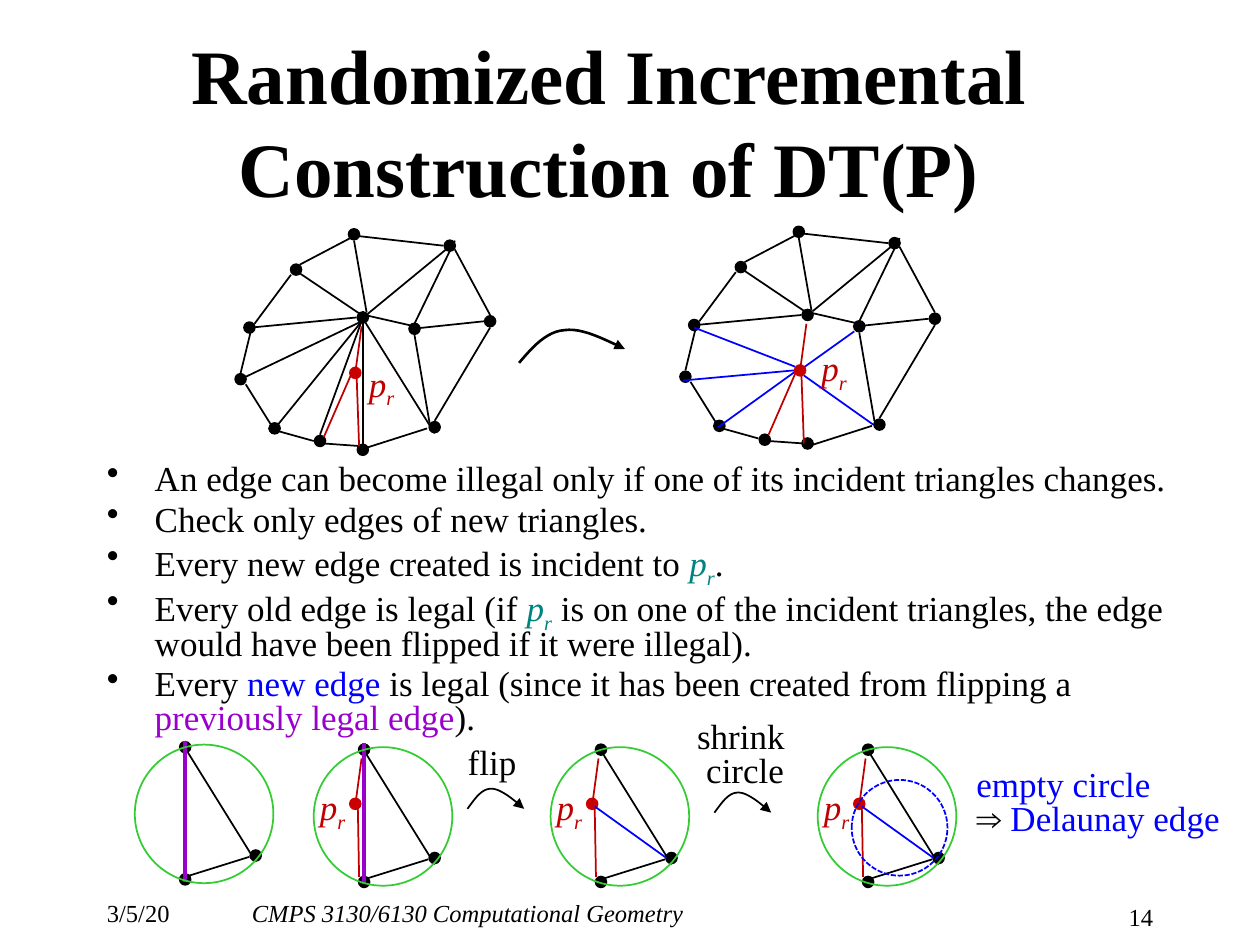
from dataclasses import dataclass

from lxml.etree import SubElement
from pptx import Presentation
from pptx.dml.color import RGBColor
from pptx.enum.dml import MSO_LINE
from pptx.enum.shapes import MSO_CONNECTOR, MSO_SHAPE
from pptx.enum.text import MSO_ANCHOR, MSO_AUTO_SIZE, PP_ALIGN
from pptx.oxml.ns import qn
from pptx.util import Inches, Pt


@dataclass(frozen=True)
class Theme:
    font: str = "Times New Roman"
    black: str = "000000"
    teal: str = "008380"
    blue: str = "0000FF"
    purple: str = "9900CC"
    green: str = "33CC33"
    red: str = "C00000"
    red_dot: str = "CC0000"
    title: int = 44
    body: int = 20
    footer: int = 14
    thin: float = 1
    medium: float = 1.5
    thick: float = 2.5


THEME = Theme()
CELL = Inches(0.01)  # the slide is a grid of 1000 columns by 750 rows
DOT = 10
PR_LABEL = [("p", THEME.red, "i"), ("r", THEME.red, "i_")]

# Triangulation: grid cells from the top left of its box
RIM_DOTS = [(32, 159), (5, 120), (12, 79), (49, 33), (102, 71), (143, 80),
            (95, 5), (171, 14), (159, 158), (203, 74)]
MESH_EDGES = [
    (92, 8, 52, 29), (16, 76, 45, 37), (5, 115, 14, 78), (29, 156, 9, 124),
    (63, 169, 27, 159), (99, 173, 71, 171), (153, 159, 106, 174),
    (143, 85, 155, 155), (99, 68, 143, 78), (52, 36, 101, 69),
    (95, 10, 105, 67), (168, 17, 106, 68), (175, 10, 141, 80),
    (95, 6, 166, 14), (175, 17, 203, 69), (203, 79, 159, 153),
    (198, 74, 141, 80), (13, 79, 97, 71)]
NEW_POINT = (96, 115)
NEW_POINT_EDGES = [(96, 115, 101, 78), (71, 166, 95, 111), (99, 173, 97, 116)]
OLD_SPOKES = [(7, 119, 99, 75), (33, 158, 106, 68), (68, 164, 101, 74),
              (102, 178, 102, 66), (159, 163, 104, 75)]
FLIPPED_SPOKES = [(12, 81, 92, 112), (3, 123, 91, 115), (154, 158, 99, 119),
                  (139, 84, 97, 114), (31, 160, 92, 116)]

# Curved arrows: start point, then two Bezier segments
LARGE_ARC = [(0, 27), (11, 14), (22, 2), (36, 1), (50, -1), (67, 8), (84, 16)]
SMALL_ARC = [(0, 16), (6, 8), (11, 0), (19, 0), (26, 0), (36, 8), (45, 16)]


def color(value):
    return RGBColor.from_string(value)


def cells(*values):
    return [round(value * CELL) for value in values]


def write_runs(paragraph, runs, size):
    """Each run is (text, color, flags): b bold, i italic, _ subscript."""
    for text, run_color, flags in runs:
        for index, piece in enumerate(text.split("\n")):
            if index:
                paragraph.add_line_break()
            if not piece:
                continue
            run = paragraph.add_run()
            run.text = piece
            run.font.name, run.font.size = THEME.font, Pt(size)
            run.font.color.rgb = color(run_color)
            run.font.bold, run.font.italic = "b" in flags, "i" in flags
            if "_" in flags:
                run._r.get_or_add_rPr().set("baseline", "-25000")


def add_text(slide, box, runs, size=THEME.body, align=PP_ALIGN.LEFT,
             spacing=1.0, wrap=False):
    shape = slide.shapes.add_textbox(*cells(*box))
    shape.text_frame.word_wrap = wrap
    paragraph = shape.text_frame.paragraphs[0]
    paragraph.alignment, paragraph.line_spacing = align, spacing
    write_runs(paragraph, runs, size)
    return shape


def add_pr_label(slide, left, top):
    label = add_text(slide, (left, top, 42, 37), PR_LABEL, spacing=0.8)
    label.text_frame.paragraphs[0].space_before = Pt(THEME.body * 0.2)


def add_ellipse(slide, left, top, size, fill=None, line=None, dashed=False):
    shape = slide.shapes.add_shape(MSO_SHAPE.OVAL, *cells(left, top, size, size))
    shape.shadow.inherit = False
    if fill:
        shape.fill.solid()
        shape.fill.fore_color.rgb = color(fill)
    else:
        shape.fill.background()
    if line:
        shape.line.color.rgb, shape.line.width = color(line), Pt(THEME.thin)
    else:
        shape.line.fill.background()
    if dashed:
        shape.line.dash_style = MSO_LINE.SQUARE_DOT


def add_dots(slide, left, top, centers, fill=THEME.black):
    for x, y in centers:
        add_ellipse(slide, left + x - DOT / 2, top + y - DOT / 2, DOT, fill)


def add_edges(slide, left, top, edges, line=THEME.black, width=THEME.thin):
    for x1, y1, x2, y2 in edges:
        edge = slide.shapes.add_connector(
            MSO_CONNECTOR.STRAIGHT, *cells(left + x1, top + y1, left + x2, top + y2))
        edge.line.color.rgb, edge.line.width = color(line), Pt(width)
        SubElement(edge._element.spPr, qn("a:effectLst"))


def add_curved_arrow(slide, left, top, arc, width=THEME.thin, steps=12):
    points = []
    for first in (0, 3):
        a, b, c, d = arc[first:first + 4]
        for step in range(1, steps + 1):
            t = step / steps
            weights = ((1 - t) ** 3, 3 * t * (1 - t) ** 2, 3 * t * t * (1 - t), t ** 3)
            x, y = (sum(w * p[axis] for w, p in zip(weights, (a, b, c, d)))
                    for axis in (0, 1))
            points.append(cells(left + x, top + y))
    builder = slide.shapes.build_freeform(*cells(left + arc[0][0], top + arc[0][1]))
    builder.add_line_segments(points, close=False)
    arrow = builder.convert_to_shape()
    arrow.shadow.inherit = False
    arrow.fill.background()
    arrow.line.color.rgb, arrow.line.width = color(THEME.black), Pt(width)
    SubElement(arrow.line._get_or_add_ln(), qn("a:tailEnd"), type="triangle")


def add_title(slide, box):
    title = slide.shapes.title
    title.left, title.top, title.width, title.height = cells(*box)
    frame = title.text_frame
    frame.word_wrap, frame.auto_size = True, MSO_AUTO_SIZE.NONE
    frame.vertical_anchor = MSO_ANCHOR.MIDDLE
    frame.paragraphs[0].alignment = PP_ALIGN.CENTER
    write_runs(frame.paragraphs[0], [("Randomized Incremental Construction of DT(P)",
                                      THEME.black, "b")], THEME.title)


def add_bullets(slide, box):
    black = THEME.black
    pr = [("p", THEME.teal, "i"), ("r", THEME.teal, "i_")]
    bullets = [
        [("An edge can become illegal only if one of its incident triangles changes.",
          black, "")],
        [("Check only edges of new triangles.", black, "")],
        [("Every new edge created is incident to ", black, ""), *pr, (".", black, "")],
        [("Every old edge is legal (if ", black, ""), *pr,
         (" is on one of the incident triangles, the edge would have been flipped "
          "if it were illegal).", black, "")],
        [("Every ", black, ""), ("new edge ", THEME.blue, ""),
         ("is legal (since it has been created from flipping a ", black, ""),
         ("previously legal edge", THEME.purple, ""), (").", black, "")]]
    frame = slide.shapes.add_textbox(*cells(*box)).text_frame
    frame.word_wrap = True
    for index, runs in enumerate(bullets):
        paragraph = frame.add_paragraph() if index else frame.paragraphs[0]
        paragraph.line_spacing, paragraph.space_before = 0.8, Pt(THEME.body * 0.2)
        properties = paragraph._p.get_or_add_pPr()
        indent = Inches(0.38)
        properties.set("marL", str(indent))
        properties.set("indent", str(-indent))
        SubElement(properties, qn("a:buChar"), char="•")
        write_runs(paragraph, runs, THEME.body)


def add_triangulation(slide, left, top, low_dots, spokes, spoke_color, label):
    add_dots(slide, left, top, RIM_DOTS + low_dots)
    add_edges(slide, left, top, MESH_EDGES)
    add_edges(slide, left, top, spokes, spoke_color)
    add_dots(slide, left, top, [NEW_POINT], THEME.red_dot)
    add_edges(slide, left, top, NEW_POINT_EDGES, THEME.red)
    add_pr_label(slide, left + label[0], top + label[1])


def add_circle_step(slide, left, top, old_edge=False, point=False, new_edge=False):
    add_dots(slide, left, top, [(40, 2), (96, 88), (40, 107)])
    add_edges(slide, left, top, [(91, 89, 43, 104), (96, 93, 42, 6)])
    if old_edge:
        add_edges(slide, left, top, [(40, 109, 40, -3)], THEME.purple, THEME.thick)
    if point:
        add_dots(slide, left, top, [(33, 45)], THEME.red_dot)
        add_edges(slide, left, top, [(33, 46, 38, 9), (36, 103, 35, 47)], THEME.red)
        add_pr_label(slide, left - 5, top + 29)
    add_ellipse(slide, left, top, 110, line=THEME.green)
    if new_edge:
        add_edges(slide, left, top, [(92, 88, 35, 47)], THEME.blue)


def add_flip_sequence(slide, top):
    add_circle_step(slide, 107, top - 2, old_edge=True)
    add_circle_step(slide, 249, top, old_edge=True, point=True)
    add_circle_step(slide, 437, top, point=True, new_edge=True)
    add_circle_step(slide, 649, top, point=True, new_edge=True)
    add_ellipse(slide, 676, top + 26, 76, line=THEME.blue, dashed=True)
    # Step arrows and their captions
    add_curved_arrow(slide, 371, top + 33, SMALL_ARC)
    add_text(slide, (361, top - 10, 59, 44), [("flip", THEME.black, "")],
             align=PP_ALIGN.CENTER)
    add_curved_arrow(slide, 567, top + 36, SMALL_ARC)
    add_text(slide, (543, top - 24, 90, 64), [("shrink\n circle", THEME.black, "")],
             align=PP_ALIGN.CENTER, spacing=0.8)
    add_text(slide, (765, top + 14, 221, 64),
             [("empty circle\n", THEME.blue, ""), ("⇒ ", THEME.black, ""),
              ("Delaunay edge", THEME.blue, "")], spacing=0.8, wrap=True)


def add_footer(slide, top):
    for left, row, width, text, flags, align in (
            (75, top, 95, "3/5/20", "", PP_ALIGN.LEFT),
            (190, top, 634, "CMPS 3130/6130 Computational Geometry", "i", PP_ALIGN.LEFT),
            (851, top + 3, 74, "14", "", PP_ALIGN.RIGHT)):
        add_text(slide, (left, row, width, 25), [(text, THEME.black, flags)],
                 THEME.footer, align, wrap=True)


def main():
    presentation = Presentation()
    presentation.slide_width, presentation.slide_height = cells(1000, 750)
    slide = presentation.slides.add_slide(presentation.slide_layouts[5])
    add_footer(slide, 708)
    add_title(slide, (71, 33, 825, 125))
    add_bullets(slide, (75, 364, 873, 300))
    add_triangulation(slide, 186, 181, [(102, 176), (68, 169)],
                      OLD_SPOKES, THEME.black, (97, 105))
    add_triangulation(slide, 539, 179, [(102, 173), (68, 170)],
                      FLIPPED_SPOKES, THEME.blue, (103, 95))
    add_curved_arrow(slide, 412, 261, LARGE_ARC, THEME.medium)
    add_flip_sequence(slide, 593)
    presentation.save("out.pptx")


if __name__ == "__main__":
    main()
